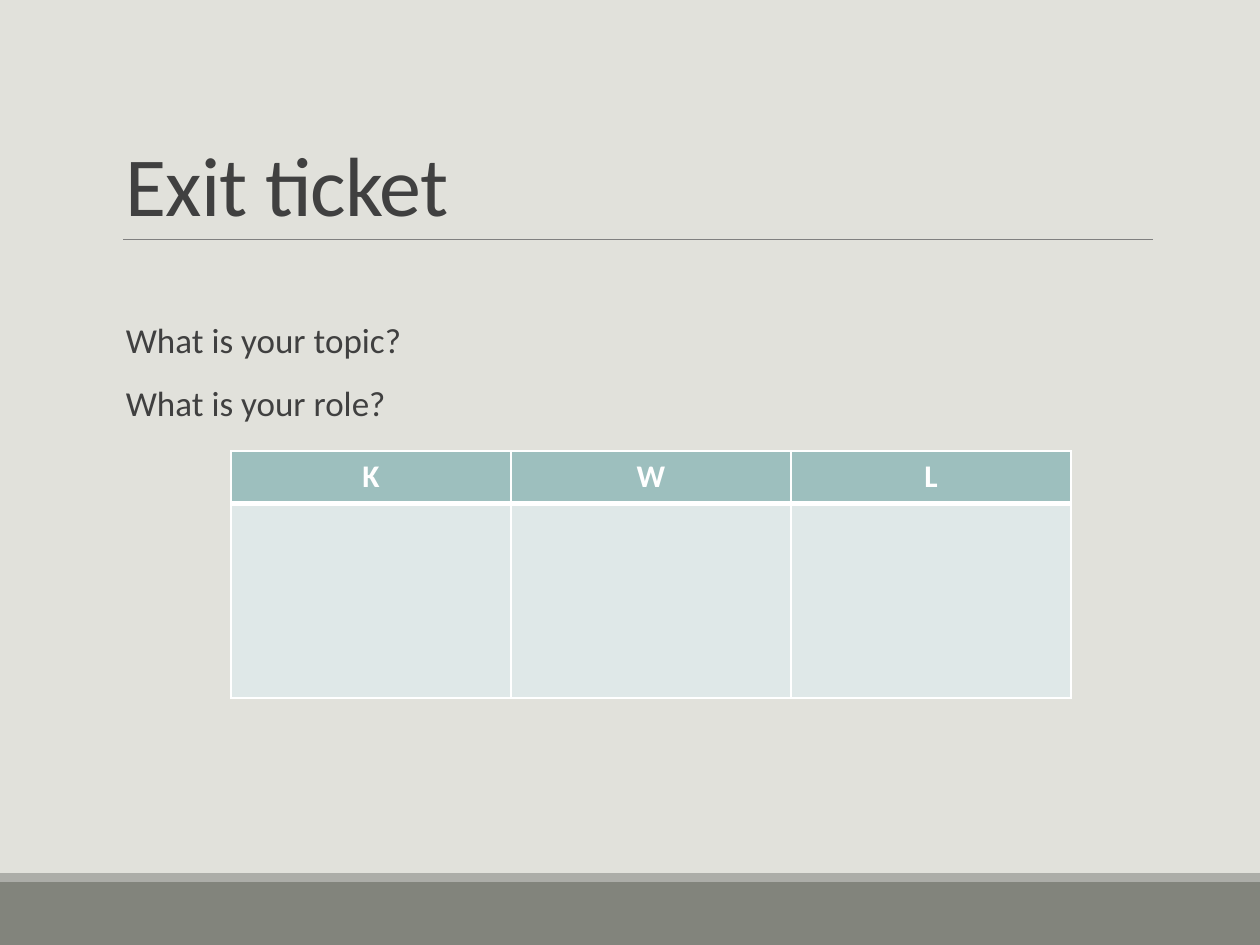
from lxml.etree import SubElement
from pptx import Presentation
from pptx.dml.color import RGBColor
from pptx.enum.shapes import MSO_CONNECTOR, MSO_SHAPE
from pptx.enum.text import MSO_ANCHOR, PP_ALIGN
from pptx.oxml.ns import qn
from pptx.util import Pt

BACKGROUND = RGBColor(0xE1, 0xE1, 0xDB)
FOOTER = RGBColor(0x82, 0x84, 0x7C)
STRIPE = RGBColor(0xAC, 0xAD, 0xA8)
RULE = RGBColor(0x80, 0x80, 0x80)
INK = RGBColor(0x40, 0x40, 0x40)
TEAL = RGBColor(0x9D, 0xBF, 0xBE)
PALE_TEAL = RGBColor(0xDF, 0xE8, 0xE8)
WHITE = RGBColor(0xFF, 0xFF, 0xFF)


def style_font(font, size, color, bold=False):
    font.name = "Calibri"
    font.size = Pt(size)
    font.color.rgb = color
    font.bold = bold


def add_border(cell, side, width):
    line = SubElement(cell._tc.get_or_add_tcPr(), qn(f"a:{side}"), w=str(Pt(width)))
    fill = SubElement(line, qn("a:solidFill"))
    SubElement(fill, qn("a:srgbClr"), val=str(WHITE))


deck = Presentation()
deck.slide_width, deck.slide_height = Pt(720), Pt(540)
page = deck.slides.add_slide(deck.slide_layouts[6])
page.background.fill.solid()
page.background.fill.fore_color.rgb = BACKGROUND

for top, height, color in [(504, 36, FOOTER), (498.9, 5.1, STRIPE)]:
    band = page.shapes.add_shape(MSO_SHAPE.RECTANGLE, 0, Pt(top), Pt(720), Pt(height))
    band.shadow.inherit = False
    band.fill.solid()
    band.fill.fore_color.rgb = color
    band.line.fill.background()

rule = page.shapes.add_connector(
    MSO_CONNECTOR.STRAIGHT, Pt(70.5), Pt(136.8), Pt(658.8), Pt(136.8))
rule.line.color.rgb = RULE
rule.line.width = Pt(0.5)
SubElement(rule._element.spPr, qn("a:effectLst"))

title = page.shapes.add_textbox(Pt(64.8), Pt(22.3), Pt(594), Pt(114.5))
title.text_frame.word_wrap = True
title.text_frame.vertical_anchor = MSO_ANCHOR.BOTTOM
title.text_frame.text = "Exit ticket"
para = title.text_frame.paragraphs[0]
para.line_spacing = 0.85
span = para.runs[0]
style_font(span.font, 48, INK)
span._r.get_or_add_rPr().set("spc", "-50")

questions = page.shapes.add_textbox(Pt(64.8), Pt(181.4), Pt(594), Pt(280.8))
frame = questions.text_frame
frame.word_wrap = True
frame.margin_right = 0
frame.text = "What is your topic?\nWhat is your role?"
for index, para in enumerate(frame.paragraphs):
    para.line_spacing = 0.9
    para.space_before = Pt(12 if index else 0)
    para.space_after = Pt(2)
    style_font(para.runs[0].font, 20, INK)

chart_frame = page.shapes.add_table(2, 3, Pt(132), Pt(257.8), Pt(480), Pt(141))
table = chart_frame.table
for column in table.columns:
    column.width = Pt(160)
for row, height in zip(table.rows, (30, 111)):
    row.height = Pt(height)

for index, heading in enumerate("KWL"):
    header, answer = table.cell(0, index), table.cell(1, index)
    header.text = heading
    para = header.text_frame.paragraphs[0]
    para.alignment = PP_ALIGN.CENTER
    style_font(para.runs[0].font, 18, WHITE, True)
    for cell, color, bottom in [(header, TEAL, 3), (answer, PALE_TEAL, 1)]:
        for side in ("lnL", "lnR"):
            add_border(cell, side, 1)
        add_border(cell, "lnT", 3 if cell is answer else 1)
        add_border(cell, "lnB", bottom)
        cell.fill.solid()
        cell.fill.fore_color.rgb = color

deck.save("out.pptx")
